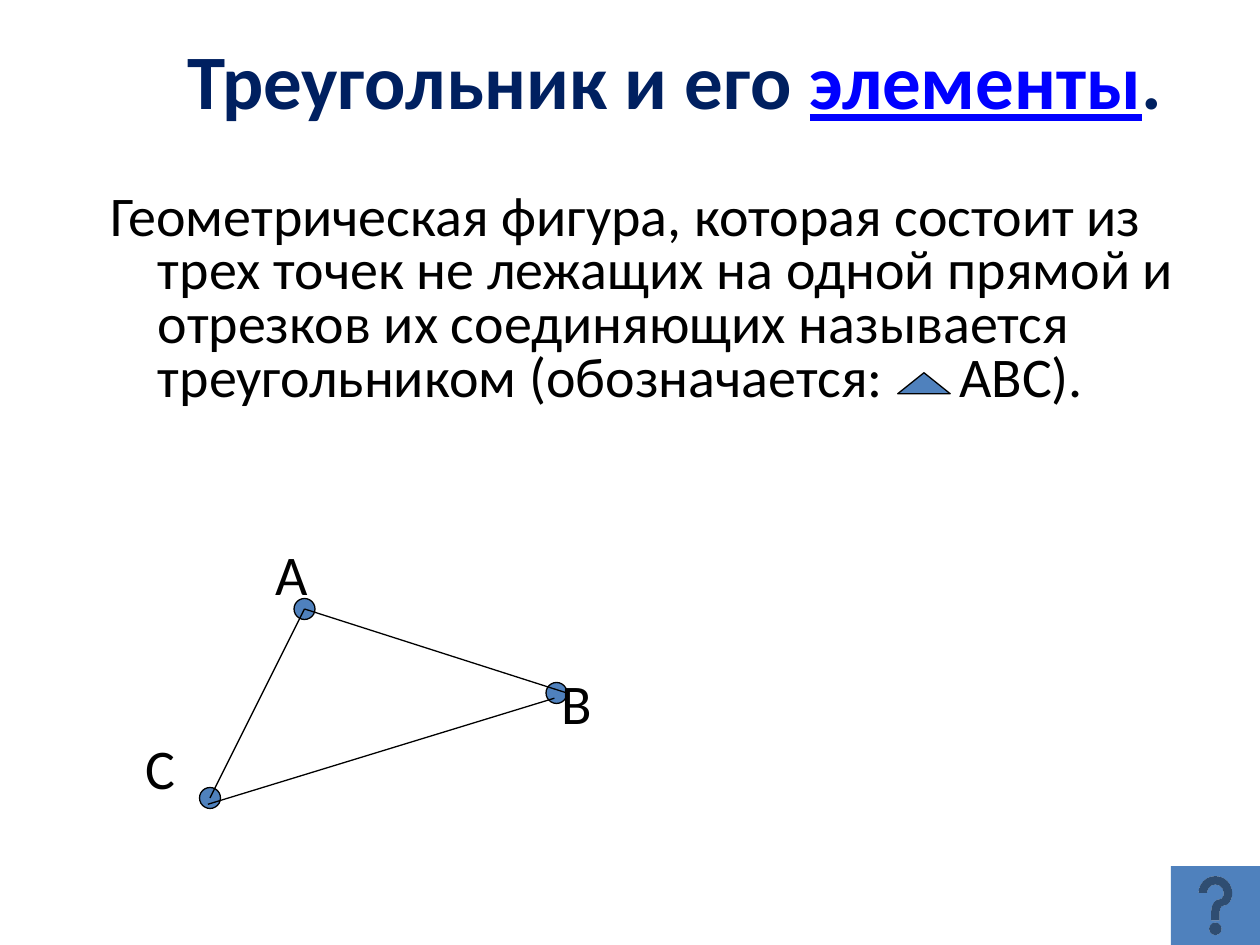
from lxml.etree import SubElement
from pptx import Presentation
from pptx.dml.color import RGBColor
from pptx.enum.shapes import MSO_CONNECTOR, MSO_SHAPE
from pptx.enum.text import MSO_ANCHOR, PP_ALIGN
from pptx.oxml.ns import qn
from pptx.util import Inches, Pt

THEME = {
    "font": "Calibri", "title_size": 44, "body_size": 32,
    "title": "002060", "link": "0000FF", "text": "000000",
    "fill": "4F81BD", "line": "000000", "line_width": 0.75,
}

# All places are in columns and rows of a 120 x 90 grid.
COLUMNS, ROWS = 120, 90
UNIT = Inches(10) / COLUMNS

# Each run: text and its format
TITLE = [
    ("Треугольник и его ", {}),
    ("элементы", {"color": THEME["link"], "underline": True}),
    (".", {}),
]
SYMBOL_GAP = 36  # points added after the space that holds the triangle symbol
DEFINITION = [
    ("Геометрическая фигура, которая состоит из трех точек не лежащих на одной "
     "прямой и отрезков их соединяющих называется треугольником (обозначается:", {}),
    (" ", {"spacing": SYMBOL_GAP}),
    ("АВС).", {}),
]
TITLE_BOX = (10.3, 0, 108, 15)
DEFINITION_BOX = (9.3, 17.8, 108.8, 30)
SYMBOL_BOX = (85.5, 35.5, 5, 2)
HELP_BOX = (111.5, 82.5, 8.5, 7.5)

DOT = 2
# Vertex name: centre of its dot, corner of its label
VERTICES = {
    "А": ((29, 58), (26.2, 51.4)),
    "В": ((53, 66), (53.5, 63.7)),
    "С": ((20, 76), (13.9, 69.9)),
}
SIDES = [
    ((20, 76), (29, 58)),
    ((19.8, 76.6), (52.8, 66.5)),
    ((29, 58), (54, 66)),
]


def grid(*values):
    return [round(value * UNIT) for value in values]


def add_text(slide, box, runs, *, size=THEME["body_size"], color=THEME["text"],
             bold=False, align=PP_ALIGN.LEFT, anchor=MSO_ANCHOR.TOP,
             margins=(0.1, 0.05), line_spacing=1.0, hanging=0):
    """Add a text box; margins are its side and top insets in inches."""
    frame = slide.shapes.add_textbox(*grid(*box)).text_frame
    frame.word_wrap = True
    frame.vertical_anchor = anchor
    frame.margin_left = frame.margin_right = Inches(margins[0])
    frame.margin_top = frame.margin_bottom = Inches(margins[1])
    paragraph = frame.paragraphs[0]
    paragraph.alignment = align
    paragraph.line_spacing = line_spacing
    if hanging:
        properties = paragraph._p.get_or_add_pPr()
        properties.set("marL", str(Inches(hanging)))
        properties.set("indent", str(-Inches(hanging)))
    for text, style in runs:
        run = paragraph.add_run()
        run.text = text
        font = run.font
        font.name, font.size, font.bold = THEME["font"], Pt(size), bold
        font.underline = style.get("underline", False)
        font.color.rgb = RGBColor.from_string(style.get("color", color))
        if "spacing" in style:
            run._r.get_or_add_rPr().set("spc", str(style["spacing"] * 100))


def draw_line(line):
    line.color.rgb = RGBColor.from_string(THEME["line"])
    line.width = Pt(THEME["line_width"])


def add_filled(slide, kind, box, outlined=True):
    shape = slide.shapes.add_shape(kind, *grid(*box))
    shape.shadow.inherit = False
    shape.fill.solid()
    shape.fill.fore_color.rgb = RGBColor.from_string(THEME["fill"])
    if outlined:
        draw_line(shape.line)
    else:
        shape.line.fill.background()


def add_side(slide, start, end):
    connector = slide.shapes.add_connector(MSO_CONNECTOR.STRAIGHT, *grid(*start, *end))
    draw_line(connector.line)
    SubElement(connector._element.spPr, qn("a:effectLst"))


def main():
    presentation = Presentation()
    presentation.slide_width, presentation.slide_height = grid(COLUMNS, ROWS)
    slide = presentation.slides.add_slide(presentation.slide_layouts[6])

    add_text(slide, TITLE_BOX, TITLE, size=THEME["title_size"], color=THEME["title"],
             bold=True, align=PP_ALIGN.CENTER, anchor=MSO_ANCHOR.MIDDLE)
    add_text(slide, DEFINITION_BOX, DEFINITION, line_spacing=0.8, hanging=0.38)

    for name, ((x, y), corner) in VERTICES.items():
        add_filled(slide, MSO_SHAPE.OVAL, (x - DOT / 2, y - DOT / 2, DOT, DOT))
        add_text(slide, (*corner, 5, 6.5), [(name, {})], margins=(0, 0))
    for start, end in SIDES:
        add_side(slide, start, end)

    add_filled(slide, MSO_SHAPE.ISOSCELES_TRIANGLE, SYMBOL_BOX)
    add_filled(slide, MSO_SHAPE.ACTION_BUTTON_HELP, HELP_BOX, outlined=False)
    presentation.save("out.pptx")


if __name__ == "__main__":
    main()
